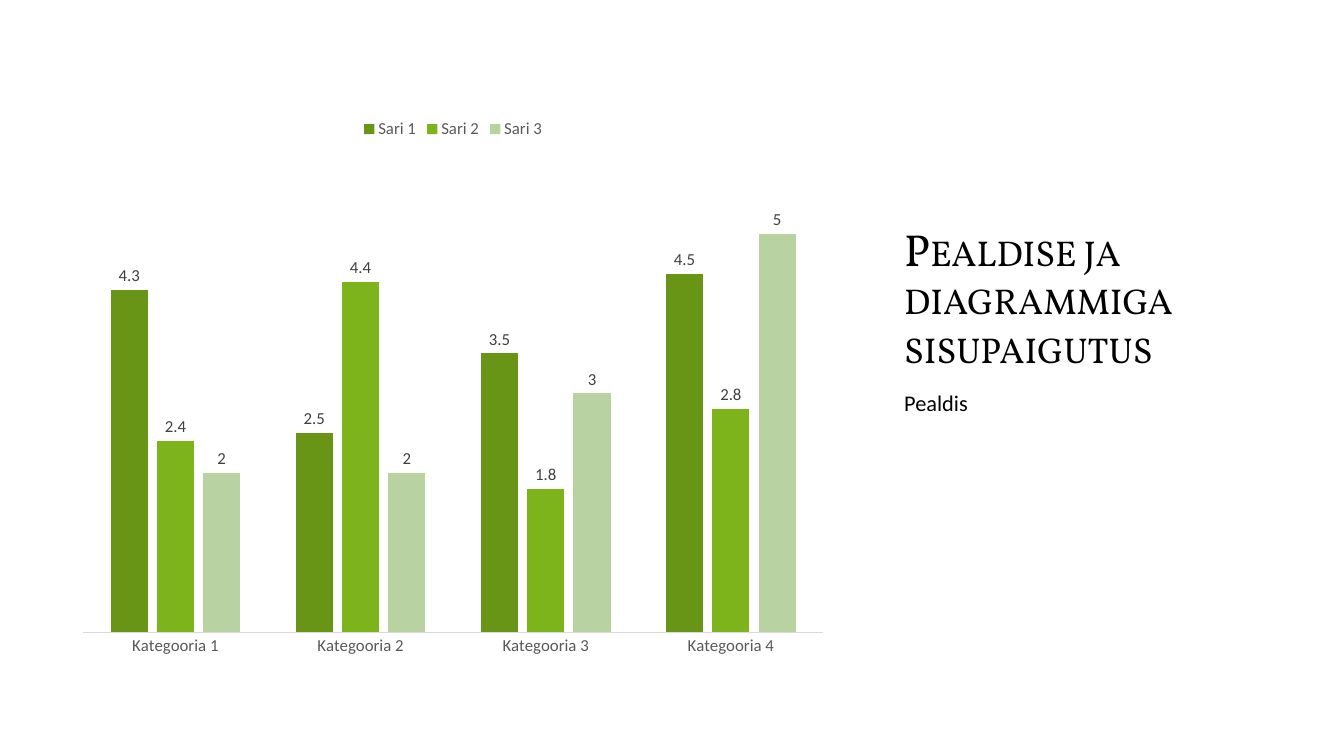
import pptx
import pptx.chart.data
import pptx.dml.color
import pptx.enum.chart
import pptx.enum.text
import pptx.util
from pptx.util import Inches

COLORS = {
    "black": "000000",
    "white": "FFFFFF",
    "label": "404040",
    "axis": "595959",
    "line": "D9D9D9",
}
CATEGORIES = [f"Kategooria {number}" for number in range(1, 5)]
SERIES = [
    ("Sari 1", (4.3, 2.5, 3.5, 4.5), "689516"),
    ("Sari 2", (2.4, 4.4, 1.8, 2.8), "7DB41B"),
    ("Sari 3", (2, 2, 3, 5), "B9D2A2"),
]


def rgb(value):
    return pptx.dml.color.RGBColor.from_string(value)


def set_values(target, values):
    for name, value in values.items():
        setattr(target, name, value)


def style_font(font, size, color, name="Calibri"):
    set_values(font, {"size": pptx.util.Pt(size), "name": name})
    font.color.rgb = rgb(COLORS[color])


def add_text(page, text, place, size, name, anchor, small_caps=False):
    box = page.shapes.add_textbox(*map(Inches, place))
    set_values(box.text_frame, {"word_wrap": True, "vertical_anchor": anchor})
    para = box.text_frame.paragraphs[0]
    para.line_spacing = 0.9
    span = para.add_run()
    span.text = text
    style_font(span.font, size, "black", name)
    if small_caps:
        span.font._element.set("cap", "small")


def style_series(series, color):
    series.format.fill.solid()
    series.format.fill.fore_color.rgb = rgb(color)
    series.invert_if_negative = False
    labels = series.data_labels
    set_values(labels, {
        "show_value": True,
        "position": pptx.enum.chart.XL_LABEL_POSITION.OUTSIDE_END,
    })
    style_font(labels.font, 12, "label")


def style_axes(chart):
    tick_none = pptx.enum.chart.XL_TICK_MARK.NONE
    axis = chart.category_axis
    set_values(axis, {"major_tick_mark": tick_none, "minor_tick_mark": tick_none})
    style_font(axis.tick_labels.font, 12, "axis")
    axis.format.line.color.rgb = rgb(COLORS["line"])
    axis.format.line.width = pptx.util.Pt(0.75)
    set_values(chart.value_axis, {
        "visible": False,
        "has_major_gridlines": False,
        "minimum_scale": 0,
        "maximum_scale": 6,
    })


def add_column_chart(page, place):
    data = pptx.chart.data.CategoryChartData()
    data.categories = CATEGORIES
    for name, values, color in SERIES:
        data.add_series(name, values)
    kind = pptx.enum.chart.XL_CHART_TYPE.COLUMN_CLUSTERED
    chart = page.shapes.add_chart(kind, *map(Inches, place), data).chart
    set_values(chart, {"has_title": False, "has_legend": True})
    style_font(chart.font, 10, "black")
    set_values(chart.legend, {
        "position": pptx.enum.chart.XL_LEGEND_POSITION.TOP,
        "include_in_layout": False,
    })
    style_font(chart.legend.font, 12, "axis")
    plot = chart.plots[0]
    set_values(plot, {"gap_width": 150, "overlap": -25, "vary_by_categories": False})
    for series, (name, values, color) in zip(plot.series, SERIES):
        style_series(series, color)
    style_axes(chart)


def main():
    deck = pptx.Presentation()
    set_values(deck, {"slide_width": Inches(13.33), "slide_height": Inches(7.5)})
    page = deck.slides.add_slide(deck.slide_layouts[6])
    page.background.fill.solid()
    page.background.fill.fore_color.rgb = rgb(COLORS["white"])
    anchors = pptx.enum.text.MSO_ANCHOR
    add_text(page, "Pealdise ja diagrammiga sisupaigutus", (8.87, 1.25, 3.8, 2.5),
             32, "Vollkorn", anchors.BOTTOM, small_caps=True)
    add_column_chart(page, (0.67, 1.07, 7.65, 5.55))
    add_text(page, "Pealdis", (8.87, 3.84, 3.8, 2.3), 16, "Calibri", anchors.TOP)
    deck.save("out.pptx")


if __name__ == "__main__":
    main()
